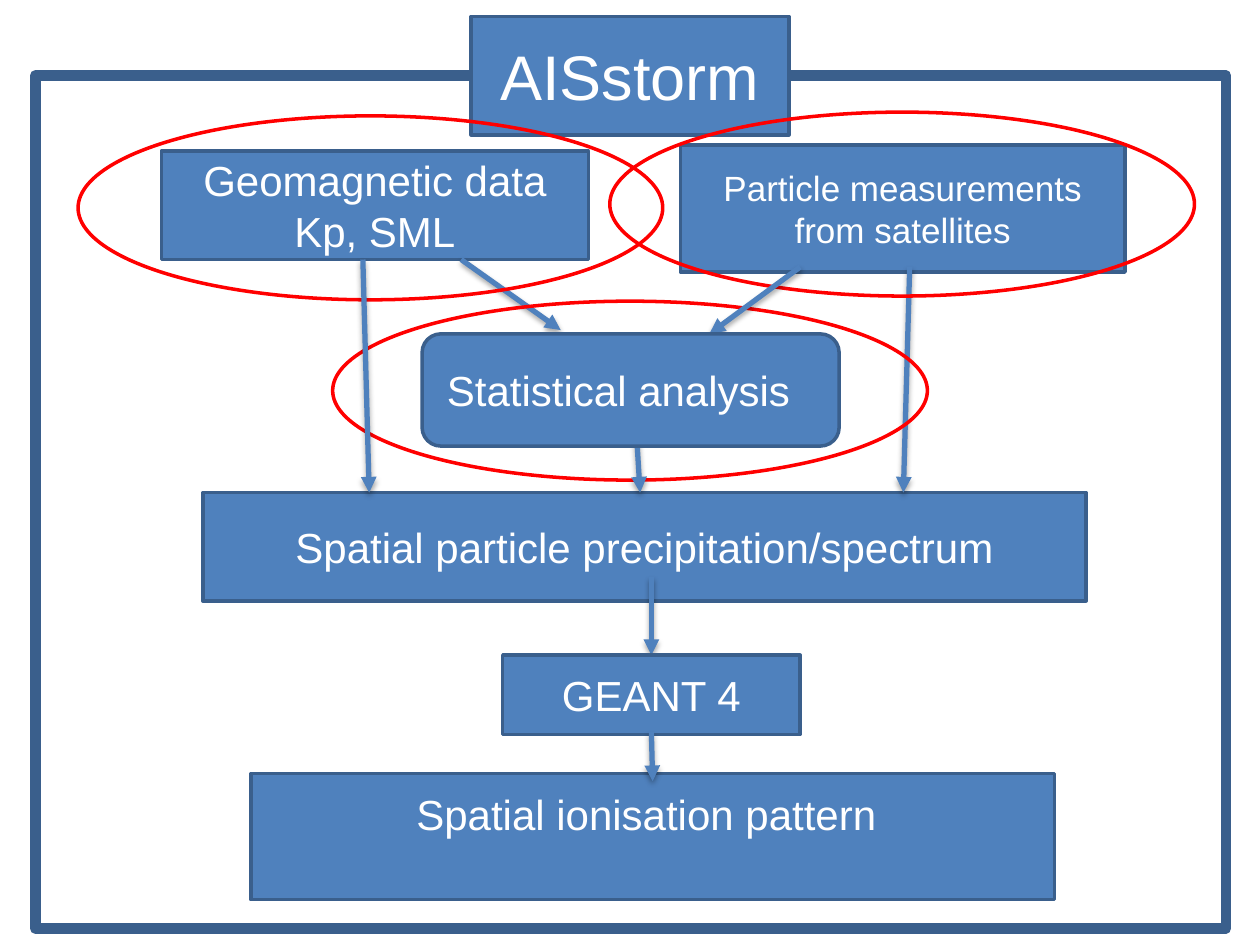
from dataclasses import dataclass

from lxml import etree
from pptx import Presentation
from pptx.dml.color import RGBColor
from pptx.enum import shapes, text
from pptx.oxml import parse_xml
from pptx.oxml.ns import nsdecls, qn
from pptx.util import Inches, Pt

COLUMNS, ROWS = 100, 75
WIDTH, HEIGHT = Inches(10), Inches(7.5)
KIND = shapes.MSO_SHAPE


@dataclass(frozen=True)
class Theme:
    """Colours, font and sizes of the flow chart."""
    font: str = "Arial"
    fill: str = "4F81BD"
    edge: str = "3A5F8C"
    mark: str = "FF0000"
    ink: str = "FFFFFF"
    title: int = 36
    body: int = 24
    small: int = 20
    thin: int = 2
    arrow: int = 3
    frame: int = 6


THEME = Theme()


def across(columns):
    """Turn grid columns into a length."""
    return round(WIDTH * columns / COLUMNS)


def down(rows):
    """Turn grid rows into a length."""
    return round(HEIGHT * rows / ROWS)


def place(left, top, width, height):
    """Turn a grid rectangle into slide lengths."""
    return across(left), down(top), across(width), down(height)


def paint(box, fill=None, edge=THEME.edge, weight=THEME.thin):
    """Set the fill and outline of a shape."""
    if fill:
        box.fill.solid()
        box.fill.fore_color.rgb = RGBColor.from_string(fill)
    else:
        box.fill.background()
    box.line.color.rgb = RGBColor.from_string(edge)
    box.line.width = Pt(weight)


def write(box, words, size=THEME.body, anchor=text.MSO_ANCHOR.MIDDLE, top=0.5, right=1):
    """Write centred words into a shape."""
    frame = box.text_frame
    frame.word_wrap = True
    frame.auto_size = text.MSO_AUTO_SIZE.NONE
    frame.vertical_anchor = anchor
    frame.margin_left, frame.margin_right = across(1), across(right)
    frame.margin_top, frame.margin_bottom = down(top), down(0.5)
    para = frame.paragraphs[0]
    para.alignment = text.PP_ALIGN.CENTER
    span = para.add_run()
    span.text = words
    span.font.name = THEME.font
    span.font.size = Pt(size)
    span.font.color.rgb = RGBColor.from_string(THEME.ink)


def add_outline(page, kind, area, **style):
    """Add an unfilled shape."""
    box = page.shapes.add_shape(kind, *place(*area))
    box.shadow.inherit = False
    paint(box, **style)
    return box


def add_step(page, words, area, kind=KIND.RECTANGLE, **style):
    """Add a filled step of the flow chart."""
    box = add_outline(page, kind, area, fill=THEME.fill)
    write(box, words, **style)


def add_title(page, words, area):
    """Turn the title placeholder into a rounded header."""
    box = page.shapes.title
    box.left, box.top, box.width, box.height = place(*area)
    box._element.spPr.append(parse_xml(
        f'<a:prstGeom {nsdecls("a")} prst="roundRect"><a:avLst/></a:prstGeom>'))
    paint(box, THEME.fill)
    write(box, words, THEME.title)


def add_arrow(page, left, top, right, bottom):
    """Add an arrow with a soft shadow below it."""
    arrow = page.shapes.add_connector(
        shapes.MSO_CONNECTOR.STRAIGHT,
        across(left), down(top), across(right), down(bottom))
    arrow.line.color.rgb = RGBColor.from_string(THEME.fill)
    arrow.line.width = Pt(THEME.arrow)
    etree.SubElement(arrow.line._get_or_add_ln(), qn("a:tailEnd"), type="triangle")
    arrow._element.spPr.append(parse_xml(
        f'<a:effectLst {nsdecls("a")}><a:outerShdw blurRad="{Pt(3.1)}" dist="{Pt(1.8)}" '
        'dir="5400000" rotWithShape="0"><a:srgbClr val="000000"><a:alpha val="35000"/>'
        '</a:srgbClr></a:outerShdw></a:effectLst>'))


def main():
    """Build the flow chart and save it."""
    deck = Presentation()
    deck.slide_width, deck.slide_height = WIDTH, HEIGHT
    page = deck.slides.add_slide(deck.slide_layouts.get_by_name("Title Only"))

    add_title(page, "AISstorm", (37.4, 1.3, 25.2, 9.4))
    frame = add_outline(page, KIND.RECTANGLE, (2.8, 6, 94.5, 67.7), weight=THEME.frame)
    page.shapes.title._element.addprevious(frame._element)

    add_step(page, "Geomagnetic data Kp, SML", (12.8, 12, 33.9, 8.6))
    add_step(page, "Particle measurements from satellites", (54, 11.5, 35.3, 10.1),
             size=THEME.small)
    add_step(page, "Spatial particle precipitation/spectrum", (16.1, 39.1, 70.1, 8.6))
    add_arrow(page, 51.7, 45.8, 51.7, 52)
    add_step(page, "GEANT 4", (39.9, 52, 23.6, 6.3))
    add_step(page, "Spatial ionisation pattern", (19.9, 61.4, 63.8, 10),
             anchor=text.MSO_ANCHOR.TOP, top=1.2, right=2)

    for ends in ((51.7, 58.1, 51.8, 62), (36.6, 20.6, 44.5, 26.2), (72.2, 21.2, 71.7, 39.1)):
        add_arrow(page, *ends)
    for area in ((48.4, 8.9, 46.4, 14.6), (26.4, 23.9, 47.2, 14.2), (6.2, 9.2, 46.4, 14.6)):
        add_outline(page, KIND.OVAL, area, edge=THEME.mark)
    for ends in ((63.5, 21.2, 56.3, 26.5), (28.8, 20.6, 29.3, 39.1), (50.3, 30.9, 50.8, 39.1)):
        add_arrow(page, *ends)
    add_step(page, "Statistical analysis", (33.5, 26.5, 33.1, 8.9),
             kind=KIND.ROUNDED_RECTANGLE, right=2.9)

    deck.save("out.pptx")


if __name__ == "__main__":
    main()
